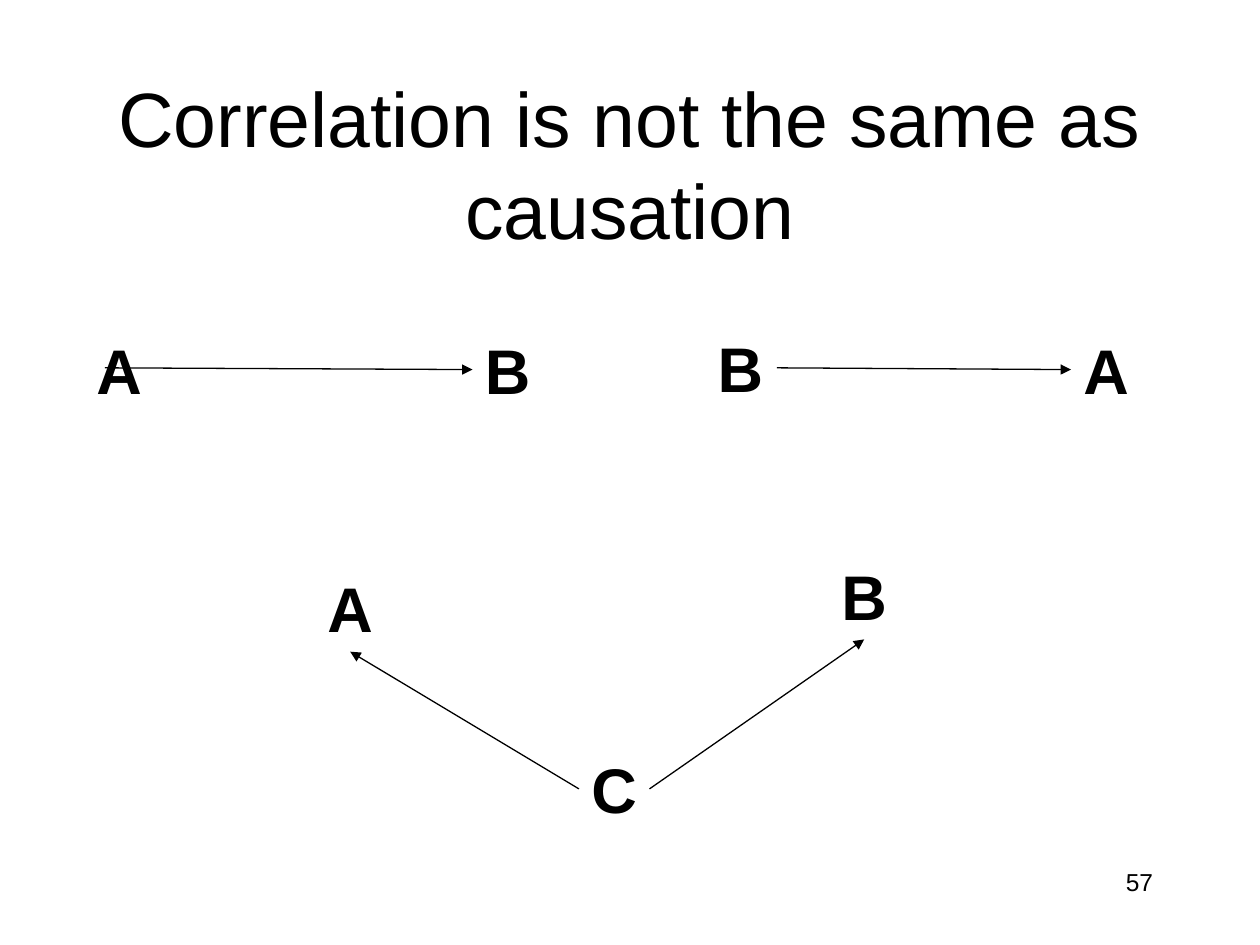
from dataclasses import dataclass

import pptx
import pptx.dml.color
import pptx.enum.dml
import pptx.enum.shapes
import pptx.enum.text
import pptx.oxml.ns
import pptx.util
from lxml import etree

Pt = pptx.util.Pt
ALIGN = pptx.enum.text.PP_ALIGN
ANCHOR = pptx.enum.text.MSO_ANCHOR
AUTO = pptx.enum.text.MSO_AUTO_SIZE


@dataclass(frozen=True)
class Theme:
    font: str = "Arial"
    ink: pptx.dml.color.RGBColor = pptx.dml.color.RGBColor(0, 0, 0)
    paper: pptx.dml.color.RGBColor = pptx.dml.color.RGBColor(255, 255, 255)
    title: float = 44
    letter: float = 36
    number: float = 14
    line: float = 0.75


THEME = Theme()
LETTER_W, LETTER_H = 40.3, 50.4


def place(sp, box):
    sp.left, sp.top, sp.width, sp.height = (Pt(v) for v in box)


def write(tf, text, size, align, bold=False):
    p = tf.paragraphs[0]
    p.alignment = align
    r = p.add_run()
    r.text = text
    r.font.name = THEME.font
    r.font.size = Pt(size)
    r.font.bold = bold
    r.font.color.rgb = THEME.ink


def add_title(s, text, box):
    sp = s.shapes.title
    place(sp, box)
    tf = sp.text_frame
    tf.word_wrap = True
    tf.auto_size = AUTO.NONE
    tf.vertical_anchor = ANCHOR.MIDDLE
    write(tf, text, THEME.title, ALIGN.CENTER)


def add_letter(s, text, x, y):
    sp = s.shapes.add_textbox(Pt(x), Pt(y), Pt(LETTER_W), Pt(LETTER_H))
    tf = sp.text_frame
    tf.word_wrap = False
    tf.auto_size = AUTO.SHAPE_TO_FIT_TEXT
    write(tf, text, THEME.letter, ALIGN.LEFT, bold=True)


def add_arrow(s, x1, y1, x2, y2):
    cx = s.shapes.add_connector(
        pptx.enum.shapes.MSO_CONNECTOR.STRAIGHT, Pt(x1), Pt(y1), Pt(x2), Pt(y2))
    cx.line.color.rgb = THEME.ink
    cx.line.width = Pt(THEME.line)
    qn = pptx.oxml.ns.qn
    etree.SubElement(cx.line._get_or_add_ln(), qn("a:tailEnd"), type="triangle")
    etree.SubElement(cx._element.spPr, qn("a:effectLst"))


def add_direct_cause(s, cause, effect, box, arrow_start, drop=0):
    """Two letters at the ends of the box; drop lowers the effect's letter."""
    x, y, w, h = box
    effect_x = x + w - LETTER_W
    add_letter(s, cause, x, y)
    add_letter(s, effect, effect_x, y + drop)
    arrow_y = y + drop + h / 2 - 1
    add_arrow(s, x + arrow_start, arrow_y, effect_x, arrow_y + 1)


def add_common_cause(s, cause, effects, box, drop):
    """Cause at the bottom centre, effects in the top corners."""
    x, y, w, h = box
    cause_x = x + (w - LETTER_W) / 2 + 4
    cause_y = y + h - LETTER_H
    add_letter(s, cause, cause_x, cause_y)
    corners = ((x, y + drop), (x + w - LETTER_W, y))
    starts = (cause_x, cause_x + LETTER_W)
    for effect, (ex, ey), start_x in zip(effects, corners, starts):
        add_letter(s, effect, ex, ey)
        add_arrow(s, start_x, cause_y + LETTER_H / 2,
                  ex + LETTER_W / 2, ey + LETTER_H)


def add_page_number(s, text, box):
    sp = s.shapes.add_textbox(*(Pt(v) for v in box))
    sp.text_frame.word_wrap = True
    write(sp.text_frame, text, THEME.number, ALIGN.RIGHT)


def main():
    prs = pptx.Presentation()
    prs.slide_width, prs.slide_height = Pt(720), Pt(540)
    s = prs.slides.add_slide(prs.slide_layouts[5])
    s.background.fill.solid()
    s.background.fill.fore_color.rgb = THEME.paper

    add_title(s, "Correlation is not the same as causation", (54, 48, 612, 90))
    add_direct_cause(s, "A", "B", (48, 186, 262.3, LETTER_H), arrow_start=12)
    add_direct_cause(s, "B", "A", (403, 185, 249.3, LETTER_H), arrow_start=41, drop=1)
    add_common_cause(s, "C", "AB", (180, 315, 334, 161), drop=7)
    add_page_number(s, "57", (516, 492, 150, 36))
    prs.save("out.pptx")


if __name__ == "__main__":
    main()
